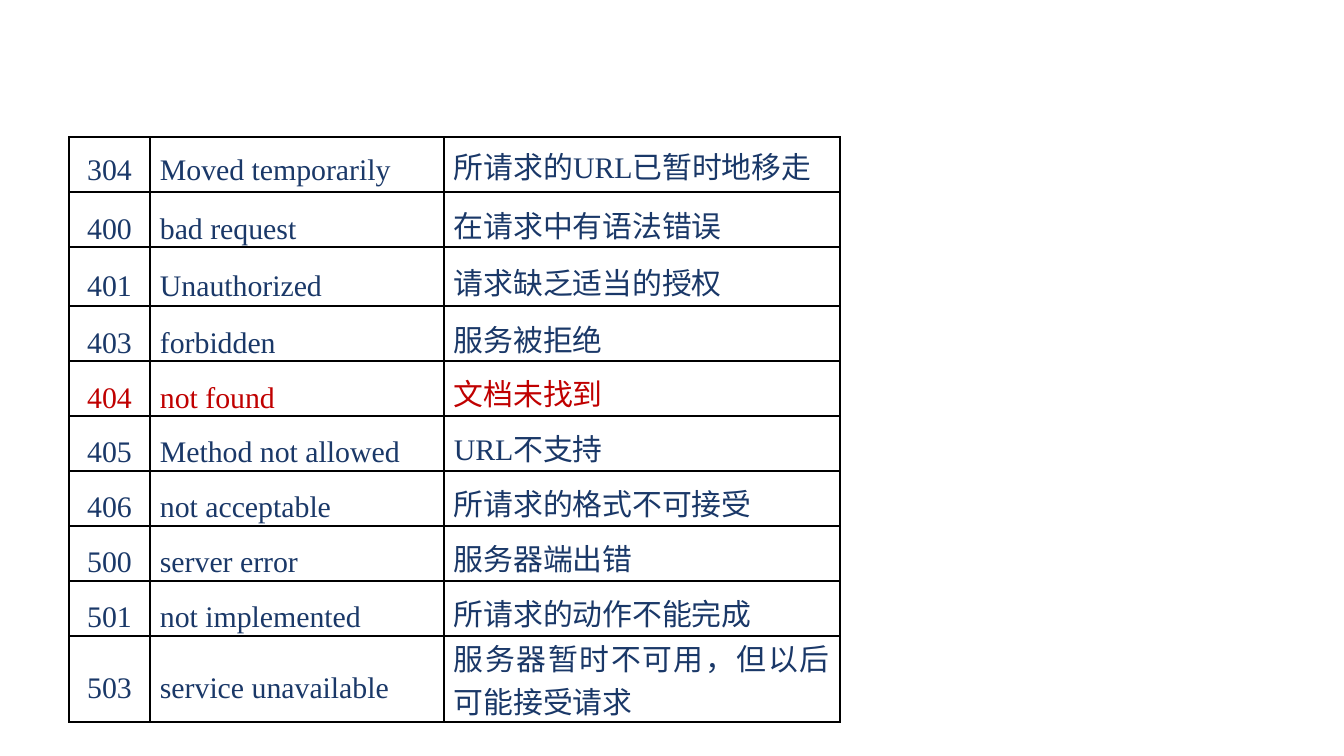
from lxml import etree
from pptx import Presentation
from pptx.dml.color import RGBColor
from pptx.enum.text import MSO_ANCHOR, PP_ALIGN
from pptx.oxml.ns import qn
from pptx.util import Emu, Pt

NAVY = RGBColor(0x1A, 0x38, 0x68)
RED = RGBColor(0xC0, 0x00, 0x00)
BLACK = RGBColor(0x00, 0x00, 0x00)
FONT = "Times New Roman"

STATUS_CODES = [
    ("304", "Moved temporarily", "所请求的URL已暂时地移走"),
    ("400", "bad request", "在请求中有语法错误"),
    ("401", "Unauthorized", "请求缺乏适当的授权"),
    ("403", "forbidden", "服务被拒绝"),
    ("404", "not found", "文档未找到"),
    ("405", "Method not allowed", "URL不支持"),
    ("406", "not acceptable", "所请求的格式不可接受"),
    ("500", "server error", "服务器端出错"),
    ("501", "not implemented", "所请求的动作不能完成"),
    ("503", "service unavailable", "服务器暂时不可用，但以后可能接受请求"),
]
HIGHLIGHTED_CODE = "404"
TWO_LINE_TEXT = STATUS_CODES[-1][2]

SLIDE_WIDTH, SLIDE_HEIGHT = 1344, 756
TABLE_LEFT, TABLE_TOP = 69, 137
COLUMN_WIDTHS = [81, 294, 396]
ROW_HEIGHTS = [55, 55, 59, 55, 55, 55, 55, 55, 55, 77]
SIDE_MARGIN = 10


def px(length):
    return Emu(round(length * 914400 / 134.4))


def add_borders(cell):
    properties = cell._tc.get_or_add_tcPr()
    for side in ("a:lnL", "a:lnR", "a:lnT", "a:lnB"):
        line = etree.SubElement(properties, qn(side), w=str(Pt(1)))
        fill = etree.SubElement(line, qn("a:solidFill"))
        etree.SubElement(fill, qn("a:srgbClr"), val=str(BLACK))


def fill_cell(cell, text, color, alignment, line_points):
    """Fixed-pitch text sits one line below the cell's top; None keeps normal spacing."""
    add_borders(cell)
    cell.fill.background()
    cell.vertical_anchor = MSO_ANCHOR.MIDDLE
    cell.margin_left = cell.margin_right = px(SIDE_MARGIN)
    cell.margin_top = Pt(line_points or 0)
    cell.margin_bottom = 0
    cell.text = text
    paragraph = cell.text_frame.paragraphs[0]
    paragraph.alignment = alignment
    if line_points:
        paragraph.line_spacing = Pt(line_points)
    paragraph.font.name = FONT
    paragraph.font.size = Pt(16)
    paragraph.font.color.rgb = color


def add_status_table(slide):
    table = slide.shapes.add_table(
        len(STATUS_CODES), len(COLUMN_WIDTHS), px(TABLE_LEFT), px(TABLE_TOP),
        px(sum(COLUMN_WIDTHS)), px(sum(ROW_HEIGHTS))).table
    table.first_row = table.horz_banding = False
    for column, width in zip(table.columns, COLUMN_WIDTHS):
        column.width = px(width)
    for row_index, (row, height) in enumerate(zip(table.rows, ROW_HEIGHTS)):
        row.height = px(height)
        texts = STATUS_CODES[row_index]
        color = RED if texts[0] == HIGHLIGHTED_CODE else NAVY
        row_pitch = 12 if row_index == 0 else 14
        for column_index, text in enumerate(texts):
            alignment = PP_ALIGN.CENTER if column_index == 0 else PP_ALIGN.JUSTIFY
            line_points = None if text == TWO_LINE_TEXT else row_pitch
            fill_cell(row.cells[column_index], text, color, alignment, line_points)


def main():
    presentation = Presentation()
    presentation.slide_width = px(SLIDE_WIDTH)
    presentation.slide_height = px(SLIDE_HEIGHT)
    slide = presentation.slides.add_slide(presentation.slide_layouts[6])
    add_status_table(slide)
    presentation.save("out.pptx")


if __name__ == "__main__":
    main()
